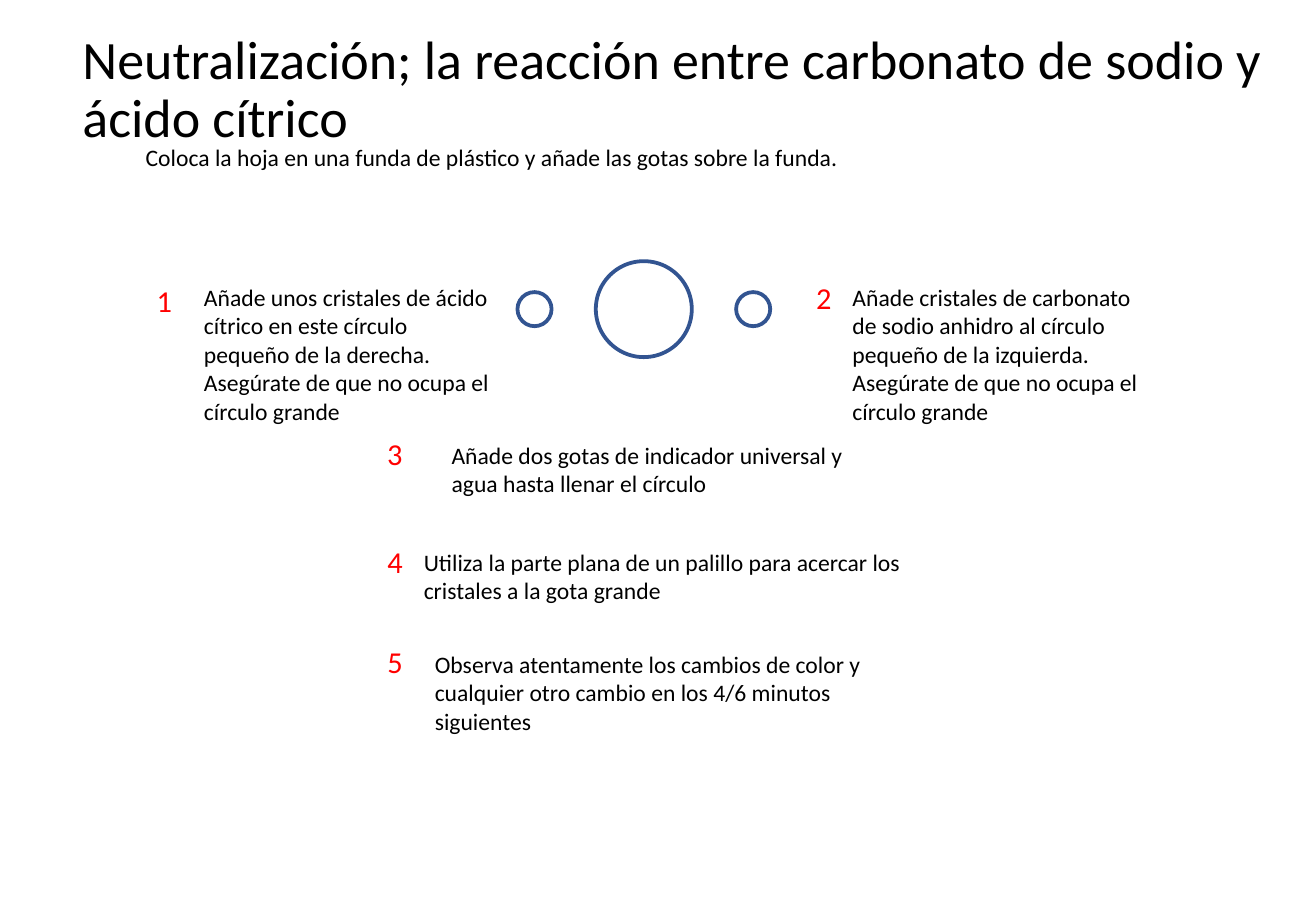
from pptx import Presentation
from pptx.dml.color import RGBColor
from pptx.enum.shapes import MSO_SHAPE as SHAPE
from pptx.enum.text import MSO_ANCHOR as ANCHOR, MSO_AUTO_SIZE as AUTO
from pptx.util import Pt

BLACK = RGBColor(0, 0, 0)
RED = RGBColor(255, 0, 0)
WHITE = RGBColor(255, 255, 255)
BLUE = RGBColor(0x32, 0x54, 0x91)

# Number offset (dx, dy) from the instruction, instruction box, wording
STEPS = [
    (-28.1, -0.7, (113.8, 164.2, 186.5, 92.2),
     "Añade unos cristales de ácido cítrico en este círculo pequeño de la "
     "derecha. Asegúrate de que no ocupa el círculo grande"),
    (-21.6, -2.2, (498.2, 164.2, 186.5, 92.2),
     "Añade cristales de carbonato de sodio anhidro al círculo pequeño de la "
     "izquierda. Asegúrate de que no ocupa el círculo grande"),
    (-38.2, -3.6, (260.6, 257.8, 266.4, 41),
     "Añade dos gotas de indicador universal y agua hasta llenar el círculo"),
    (-21.6, -2.9, (244.1, 321.1, 298.8, 41),
     "Utiliza la parte plana de un palillo para acercar los cristales a la "
     "gota grande"),
    (-28.1, -3.6, (250.6, 381.6, 298.8, 58.3),
     "Observa atentamente los cambios de color y cualquier otro cambio en los "
     "4/6 minutos siguientes"),
]


def add_text(s, box, text, size=14, color=BLACK, anchor=ANCHOR.TOP,
             spacing=1.0, auto=AUTO.SHAPE_TO_FIT_TEXT):
    sp = s.shapes.add_textbox(*map(Pt, box))
    tf = sp.text_frame
    tf.word_wrap = True
    tf.auto_size = auto
    tf.vertical_anchor = anchor
    p = tf.paragraphs[0]
    p.line_spacing = spacing
    r = p.add_run()
    r.text = text
    r.font.name = "Calibri"
    r.font.size = Pt(size)
    r.font.color.rgb = color


def add_header(s, box):
    x, y, w, h = box
    add_text(s, box,
             "Neutralización; la reacción entre carbonato de sodio y ácido cítrico",
             size=32, anchor=ANCHOR.MIDDLE, spacing=0.9, auto=AUTO.NONE)
    add_text(s, (x + 37.4, y + 68.4, 618.5, 24.5),
             "Coloca la hoja en una funda de plástico y añade las gotas sobre "
             "la funda.")


def add_circles(s, box):
    """Large circle in the middle, a small one at each end of the box."""
    x, y, w, h = box
    small = 20.2
    for cx, d in ((x + w / 2, h), (x + small / 2, small),
                  (x + w - small / 2, small)):
        sp = s.shapes.add_shape(SHAPE.OVAL, Pt(cx - d / 2),
                                Pt(y + (h - d) / 2), Pt(d), Pt(d))
        sp.shadow.inherit = False
        sp.fill.solid()
        sp.fill.fore_color.rgb = WHITE
        sp.line.color.rgb = BLUE
        sp.line.width = Pt(2.25)


def add_step(s, box, number, text, dx, dy):
    x, y, w, h = box
    add_text(s, box, text)
    add_text(s, (x + dx, y + dy, 43.9, 28.8), str(number), size=18, color=RED)


def main():
    prs = Presentation()
    prs.slide_width, prs.slide_height = Pt(780), Pt(540)
    s = prs.slides.add_slide(prs.slide_layouts[6])

    # Title and introduction
    add_header(s, (41.8, 13, 717.1, 82.1))
    # Reaction circles
    add_circles(s, (306.7, 154.8, 149.8, 56.9))
    # Numbered instructions
    for number, (dx, dy, box, text) in enumerate(STEPS, 1):
        add_step(s, box, number, text, dx, dy)

    prs.save("out.pptx")


if __name__ == "__main__":
    main()
